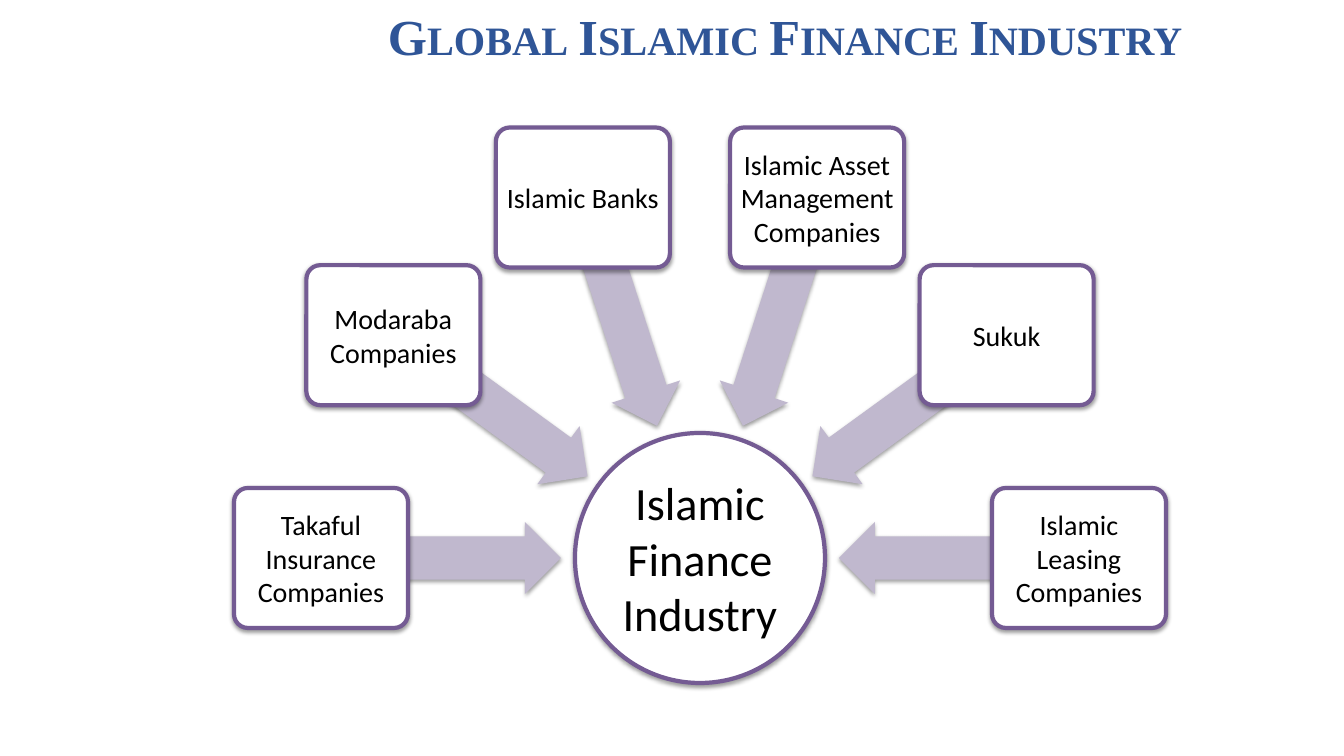
from math import cos, radians, sin

from lxml import etree
from pptx import Presentation
from pptx.dml.color import RGBColor
from pptx.enum.shapes import MSO_SHAPE
from pptx.enum.text import MSO_ANCHOR, PP_ALIGN
from pptx.oxml import parse_xml
from pptx.util import Emu, Pt

OVAL, CARD, ARROW = MSO_SHAPE.OVAL, MSO_SHAPE.ROUNDED_RECTANGLE, MSO_SHAPE.LEFT_ARROW
MIDDLE, TOP = MSO_ANCHOR.MIDDLE, MSO_ANCHOR.TOP
CENTER, LEFT = PP_ALIGN.CENTER, PP_ALIGN.LEFT
A_NS = "http://schemas.openxmlformats.org/drawingml/2006/main"
EMU_PER_PX = 914400 / 100.8


class Theme:
    title, text, fill = "2F5597", "000000", "FFFFFF"
    outline, arrow = "745B93", "C0B8CE"
    title_font, body_font = "Times New Roman", "Calibri"
    title_size, hub_size, card_size, line_width = 36, 33, 20, 3


SECTORS = [
    "Takaful Insurance Companies", "Modaraba Companies", "Islamic Banks",
    "Islamic Asset Management Companies", "Sukuk", "Islamic Leasing Companies",
]


def px(n):
    return Emu(round(n * EMU_PER_PX))


def add_text(s, text, *, size, color=Theme.text, font=Theme.body_font, bold=False,
             small_caps=False, align=CENTER, anchor=MIDDLE, inset=(4, 4)):
    tf = s.text_frame
    tf.word_wrap = True
    tf.vertical_anchor = anchor
    tf.margin_left = tf.margin_right = px(inset[0])
    tf.margin_top = tf.margin_bottom = px(inset[1])
    p = tf.paragraphs[0]
    p.alignment = align
    r = p.add_run()
    r.text = text
    r.font.size, r.font.name, r.font.bold = Pt(size), font, bold
    r.font.color.rgb = RGBColor.from_string(color)
    if small_caps:
        r.font._element.set("cap", "small")


def add_shadow(s):
    s.shadow.inherit = False
    effects = s._element.spPr.find(f"{{{A_NS}}}effectLst")
    shadow = parse_xml(
        f'<a:outerShdw xmlns:a="{A_NS}" blurRad="{Pt(3.1)}" dist="{Pt(1.6)}" '
        'dir="5400000" rotWithShape="0"/>')
    color = etree.SubElement(shadow, f"{{{A_NS}}}srgbClr", val="000000")
    etree.SubElement(color, f"{{{A_NS}}}alpha", val="38000")
    effects.append(shadow)


def add_centered(slide, kind, center, size, fill, outline=None):
    """Place a shape of the given size around its centre point."""
    (x, y), (w, h) = center, size
    s = slide.shapes.add_shape(kind, px(x - w / 2), px(y - h / 2), px(w), px(h))
    s.fill.solid()
    s.fill.fore_color.rgb = RGBColor.from_string(fill)
    if outline:
        s.line.color.rgb = RGBColor.from_string(outline)
        s.line.width = Pt(Theme.line_width)
    else:
        s.line.fill.background()
    add_shadow(s)
    return s


def add_title(slide, x, y, w, h):
    s = slide.shapes.add_textbox(px(x), px(y), px(w), px(h))
    add_text(s, "Global Islamic Finance Industry", size=Theme.title_size,
             color=Theme.title, font=Theme.title_font, bold=True, small_caps=True,
             align=LEFT, anchor=TOP, inset=(10, 5))


def add_radial_diagram(slide, x, y, w, h):
    """Hub at the bottom centre, sectors on a half circle above it."""
    hub, card, arrow = (250, 250), (174, 140), (240, 72)
    cx, cy = x + w / 2, y + h - hub[1] / 2
    card_radius = (w - card[0]) / 2
    arrow_radius = 259
    step = 180 / (len(SECTORS) - 1)

    def on_arc(radius, angle):
        return cx + radius * cos(radians(angle)), cy + radius * sin(radians(angle))

    # Hub
    s = add_centered(slide, OVAL, (cx, cy), hub, Theme.fill, Theme.outline)
    add_text(s, "Islamic Finance Industry", size=Theme.hub_size, inset=(2, 2))

    # Sectors, each with an arrow towards the hub
    for i, name in enumerate(SECTORS):
        angle = 180 + i * step
        s = add_centered(slide, ARROW, on_arc(arrow_radius, angle), arrow, Theme.arrow)
        s.adjustments[0], s.adjustments[1] = 0.6, 0.5
        s.rotation = angle % 360
        s = add_centered(slide, CARD, on_arc(card_radius, angle), card,
                         Theme.fill, Theme.outline)
        s.adjustments[0] = 0.1
        add_text(s, name, size=Theme.card_size)


def main():
    prs = Presentation()
    prs.slide_width, prs.slide_height = px(1344), px(756)
    slide = prs.slides.add_slide(prs.slide_layouts[6])
    add_title(slide, 378, 0, 958, 80)
    add_radial_diagram(slide, 234, 128, 932, 555)
    prs.save("out.pptx")


if __name__ == "__main__":
    main()
